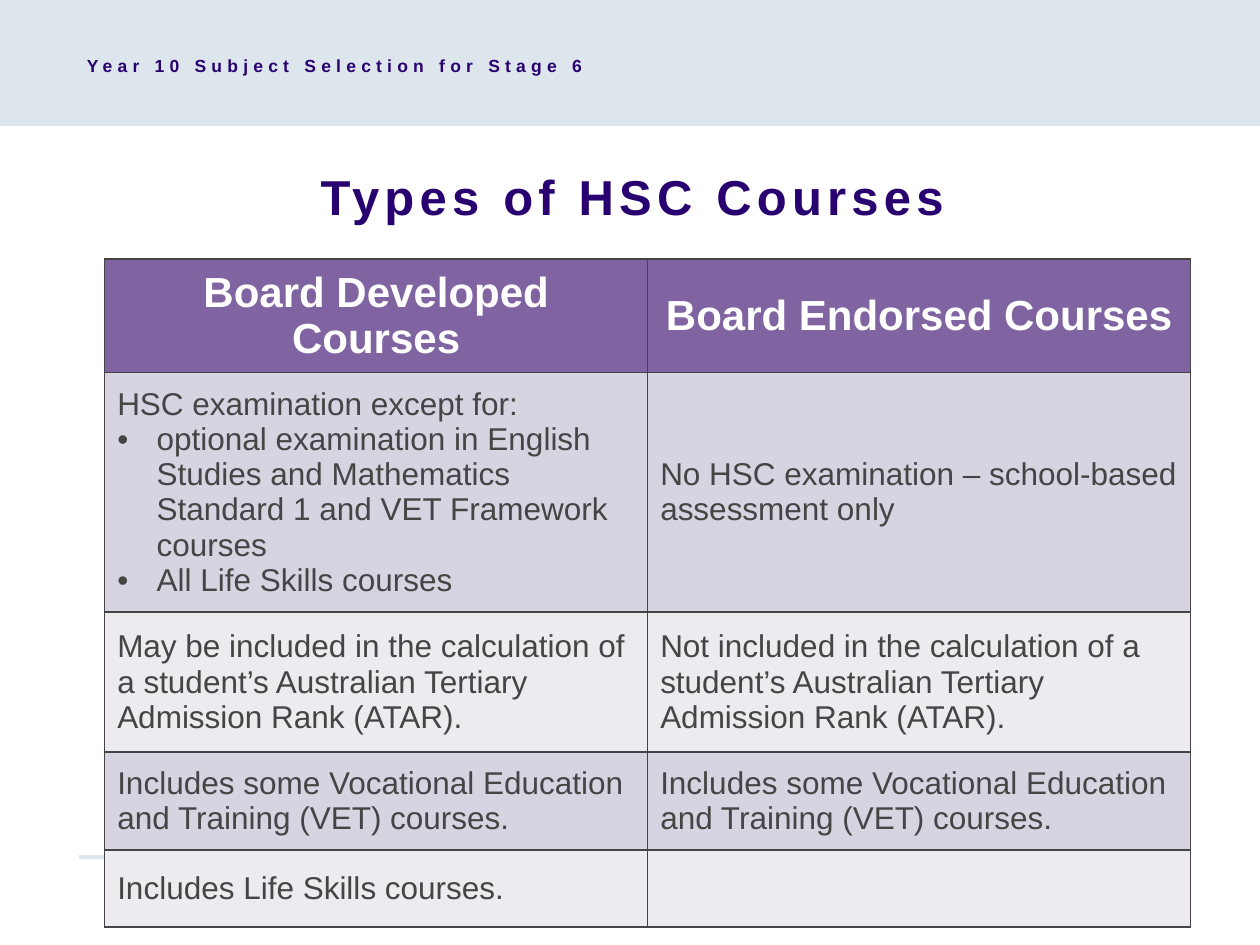
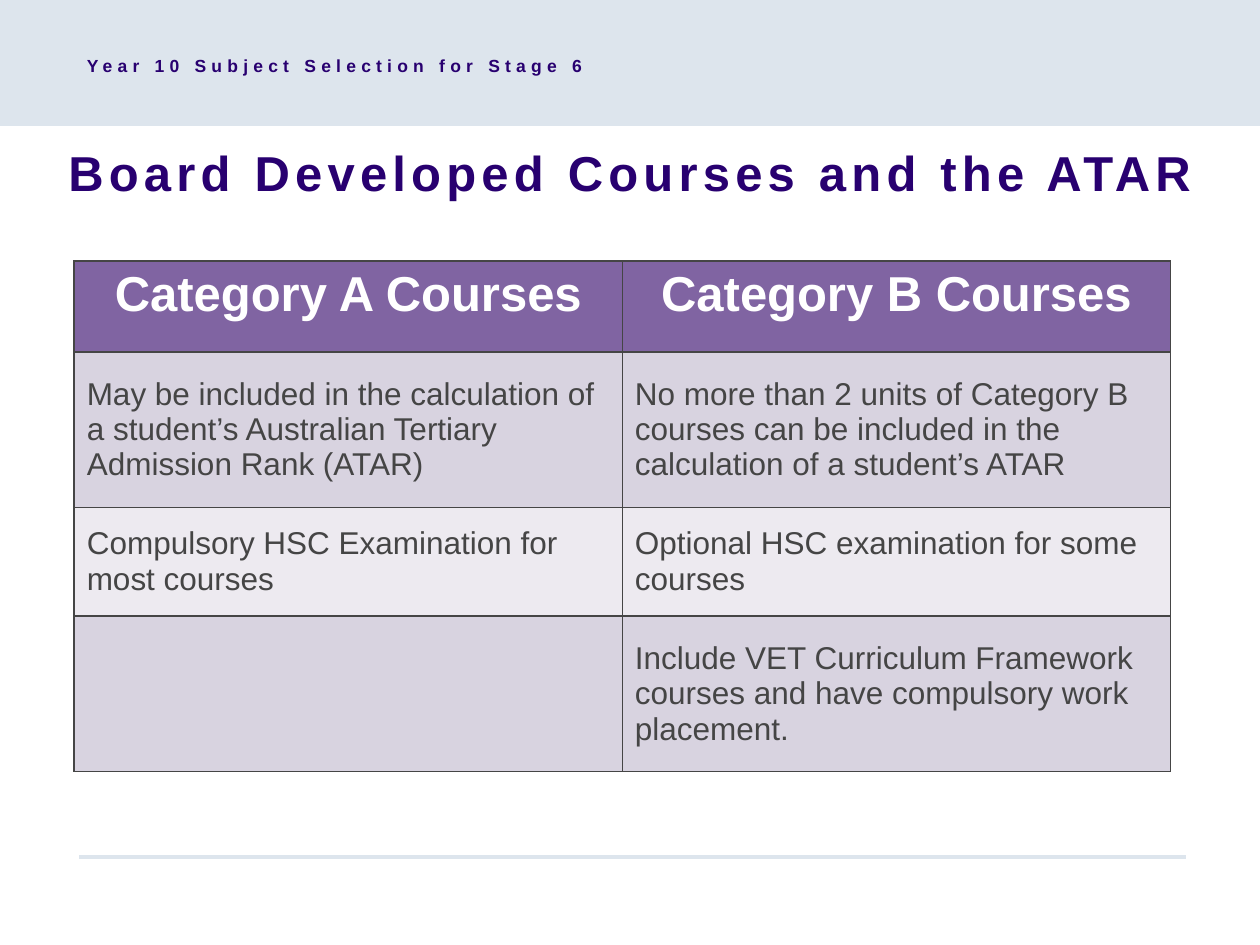
from dataclasses import dataclass

from lxml.etree import SubElement
from pptx import Presentation
from pptx.dml.color import RGBColor
from pptx.enum.shapes import MSO_CONNECTOR as Connector, MSO_SHAPE as Shape
from pptx.enum.text import MSO_ANCHOR as Anchor, PP_ALIGN as Align
from pptx.oxml import parse_xml
from pptx.oxml.ns import nsdecls, qn
from pptx.util import Pt


@dataclass(frozen=True)
class Theme:
    font: str = "Arial"
    band: str = "DDE5ED"
    heading: str = "280070"
    header_fill: str = "8064A2"
    header_text: str = "FFFFFF"
    row_fills: tuple = ("D8D3E0", "EDEAF0")
    body: str = "454545"
    running_size: float = 10
    title_size: float = 28
    body_size: float = 18
    letter_spacing: float = 3
    bullet_indent: float = 22.5


BULLET = "• "


class Deck:
    def __init__(self, theme):
        self.theme = theme
        self.presentation = Presentation()
        self.presentation.slide_width = Pt(720)
        self.presentation.slide_height = Pt(540)
        self.slide = None

    def add_slide(self):
        layout = self.presentation.slide_layouts[6]
        self.slide = self.presentation.slides.add_slide(layout)
        self.add_band(0, 0, 720, 72)
        self.add_rule(45.4, 489.6, 677.5)
        self.add_heading("Year 10 Subject Selection for Stage 6",
                         (42.5, 27.9, 452.2, 23), self.theme.running_size)

    def add_band(self, left, top, width, height):
        band = self.slide.shapes.add_shape(
            Shape.RECTANGLE, Pt(left), Pt(top), Pt(width), Pt(height))
        band.shadow.inherit = False
        band.fill.solid()
        band.fill.fore_color.rgb = RGBColor.from_string(self.theme.band)
        band.line.fill.background()

    def add_rule(self, left, top, right):
        rule = self.slide.shapes.add_connector(
            Connector.STRAIGHT, Pt(left), Pt(top), Pt(right), Pt(top))
        rule.line.color.rgb = RGBColor.from_string(self.theme.band)
        rule.line.width = Pt(2)
        SubElement(rule._element.spPr, qn("a:effectLst"))

    def style(self, paragraph, size, color, bold=False, align=Align.LEFT):
        paragraph.alignment = align
        font = paragraph.font
        font.name = self.theme.font
        font.size = Pt(size)
        font.bold = bold
        font.color.rgb = RGBColor.from_string(color)

    def add_heading(self, text, box, size, align=Align.LEFT):
        frame = self.slide.shapes.add_textbox(*map(Pt, box)).text_frame
        frame.word_wrap = True
        paragraph = frame.paragraphs[0]
        run = paragraph.add_run()
        run.text = text
        spacing = round(self.theme.letter_spacing * 100)
        run._r.get_or_add_rPr().set("spc", str(spacing))
        self.style(paragraph, size, self.theme.heading, True, align)

    def add_title(self, text, box):
        self.add_heading(text, box, self.theme.title_size, Align.CENTER)

    def add_bullet(self, paragraph):
        properties = paragraph._p.get_or_add_pPr()
        indent = Pt(self.theme.bullet_indent)
        properties.set("marL", str(indent))
        properties.set("indent", str(-indent))
        SubElement(properties, qn("a:buFont"), typeface=self.theme.font)
        SubElement(properties, qn("a:buChar"), char=BULLET.strip())

    def fill_cell(self, cell, text, fill, anchor, **style):
        cell.fill.solid()
        cell.fill.fore_color.rgb = RGBColor.from_string(fill)
        cell.vertical_anchor = anchor
        for index, side in enumerate("LRTB"):
            border = parse_xml(
                f'<a:ln{side} {nsdecls("a")} w="{Pt(1)}"><a:solidFill>'
                f'<a:srgbClr val="{self.theme.body}"/></a:solidFill></a:ln{side}>')
            cell._tc.get_or_add_tcPr().insert(index, border)
        frame = cell.text_frame
        for index, line in enumerate(text.split("\n")):
            paragraph = frame.add_paragraph() if index else frame.paragraphs[0]
            if line.startswith(BULLET):
                self.add_bullet(paragraph)
            if line:
                paragraph.add_run().text = line.removeprefix(BULLET)
            self.style(paragraph, **style)

    def add_table(self, left, top, column_width, heights, rows,
                  header_size, header_anchor):
        theme = self.theme
        columns = len(rows[0])
        table = self.slide.shapes.add_table(
            len(rows), columns, Pt(left), Pt(top),
            Pt(column_width * columns), Pt(sum(heights))).table
        for column in table.columns:
            column.width = Pt(column_width)
        for index, (height, texts) in enumerate(zip(heights, rows)):
            table.rows[index].height = Pt(height)
            for cell, text in zip(table.rows[index].cells, texts):
                if index == 0:
                    self.fill_cell(cell, text, theme.header_fill, header_anchor,
                                   size=header_size, color=theme.header_text,
                                   bold=True, align=Align.CENTER)
                else:
                    self.fill_cell(cell, text, theme.row_fills[(index - 1) % 2],
                                   Anchor.MIDDLE, size=theme.body_size,
                                   color=theme.body)


def main():
    deck = Deck(Theme())

    deck.add_slide()
    deck.add_title("Types of HSC Courses", (42.5, 91.4, 637.9, 46.8))
    vet_courses = "Includes some Vocational Education and Training (VET) courses."
    deck.add_table(59.8, 148.1, 310.3, (60.7, 128, 80, 56, 44), (
        ("Board Developed Courses", "Board Endorsed Courses"),
        ("HSC examination except for:\n"
         "• optional examination in English Studies and Mathematics Standard 1 "
         "and VET Framework courses\n"
         "• All Life Skills courses",
         "No HSC examination – school-based assessment only"),
        ("May be included in the calculation of a student’s Australian "
         "Tertiary Admission Rank (ATAR).",
         "Not included in the calculation of a student’s Australian "
         "Tertiary Admission Rank (ATAR)."),
        (vet_courses, vet_courses),
        ("Includes Life Skills courses.", ""),
    ), 24, Anchor.MIDDLE)

    deck.add_slide()
    deck.add_title("Board Developed Courses and the ATAR",
                   (10.6, 77.8, 699.1, 49.7))
    deck.add_table(42.4, 149.2, 313.2, (52, 88.7, 62.2, 88.8), (
        ("Category A Courses", "Category B Courses"),
        ("May be included in the calculation of a student’s Australian "
         "Tertiary Admission Rank (ATAR)",
         "No more than 2 units of Category B courses can be included in the "
         "calculation of a student’s ATAR"),
        ("Compulsory HSC Examination for most courses",
         "Optional HSC examination for some courses"),
        ("", "Include VET Curriculum Framework courses and have compulsory "
             "work placement."),
    ), 28, Anchor.TOP)

    deck.presentation.save("out.pptx")


if __name__ == "__main__":
    main()
